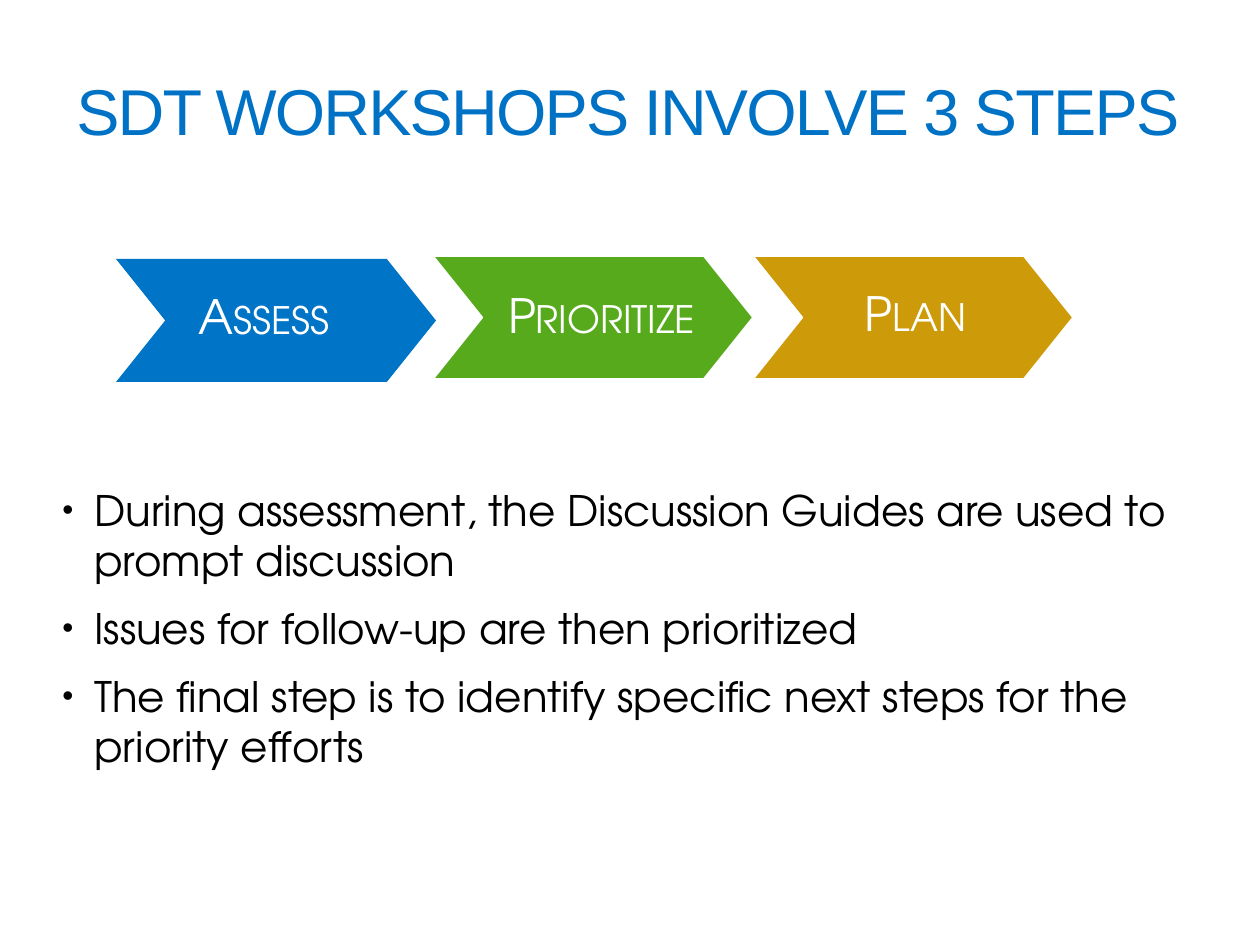
import pptx
import pptx.util
import pptx.dml.color
import pptx.enum.shapes
import pptx.enum.text
import pptx.oxml
import pptx.oxml.ns

RGB = pptx.dml.color.RGBColor
BLUE = RGB(0x00, 0x72, 0xC6)
AZURE = RGB(0x00, 0x74, 0xC6)
GREEN = RGB(0x56, 0xAA, 0x1C)
GOLD = RGB(0xCD, 0x9A, 0x09)
WHITE = RGB(0xFF, 0xFF, 0xFF)
BLACK = RGB(0x00, 0x00, 0x00)
FACE = "TeX Gyre Adventor"
PX = 914400 / 126
Pt = pptx.util.Pt
MIDDLE = pptx.enum.text.MSO_ANCHOR.MIDDLE


def px(*sizes):
    return [round(size * PX) for size in sizes]


def write(para, text, face, size, color):
    run = para.add_run()
    run.text = text
    run.font.name = face
    run.font.size = Pt(size)
    run.font.color.rgb = color
    return run.font._element


deck = pptx.Presentation()
deck.slide_width, deck.slide_height = px(1260, 945)
slide = deck.slides.add_slide(deck.slide_layouts[6])
shapes = slide.shapes

title = shapes.add_textbox(*px(64, 42, 1159, 136)).text_frame
title.word_wrap = True
title.vertical_anchor = MIDDLE
props = write(title.paragraphs[0], "SDT WORKSHOPS INVOLVE 3 STEPS", "Arial", 37, BLUE)
props.set("spc", "-100")

steps = [
    ("Assess", AZURE, None, (116, 259), (164, 267, 200, 105)),
    ("Prioritize", GREEN, WHITE, (433, 256), (470, 260, 263, 116)),
    ("Plan", GOLD, WHITE, (753, 256), (818, 258, 195, 116)),
]
for name, fill, edge, spot, area in steps:
    arrow = shapes.add_shape(pptx.enum.shapes.MSO_SHAPE.CHEVRON, *px(*spot, 320, 123))
    arrow.adjustments[0] = 0.4
    arrow.shadow.inherit = False
    arrow.fill.solid()
    arrow.fill.fore_color.rgb = fill
    if edge is None:
        arrow.line.fill.background()
    else:
        arrow.line.color.rgb = edge
        arrow.line.width = Pt(1)

    label = shapes.add_textbox(*px(*area)).text_frame
    label.word_wrap = True
    label.vertical_anchor = MIDDLE
    label.margin_left, label.margin_top, label.margin_right, label.margin_bottom = px(26, 26, 26, 26)
    para = label.paragraphs[0]
    para.alignment = pptx.enum.text.PP_ALIGN.CENTER
    para.line_spacing = 0.9
    write(para, name, FACE, 27, WHITE).set("cap", "small")

points = [
    "During assessment, the Discussion Guides are used to prompt discussion",
    "Issues for follow-up are then prioritized",
    "The final step is to identify specific next steps for the priority efforts",
]
body = shapes.add_textbox(*px(50, 478, 1159, 344)).text_frame
body.word_wrap = True
indent = px(32)[0]
for rank, point in enumerate(points):
    para = body.add_paragraph() if rank else body.paragraphs[0]
    if rank:
        para.space_before = Pt(10)
    props = para._p.get_or_add_pPr()
    props.set("marL", str(indent))
    props.set("indent", str(-indent))
    for tag, key, value in (("buSzPct", "val", "75000"), ("buFont", "typeface", "Arial"), ("buChar", "char", "•")):
        mark = pptx.oxml.parse_xml(f'<a:{tag} {pptx.oxml.ns.nsdecls("a")} {key}="{value}"/>')
        props.append(mark)
    write(para, point, FACE, 24, BLACK)

deck.save("out.pptx")
